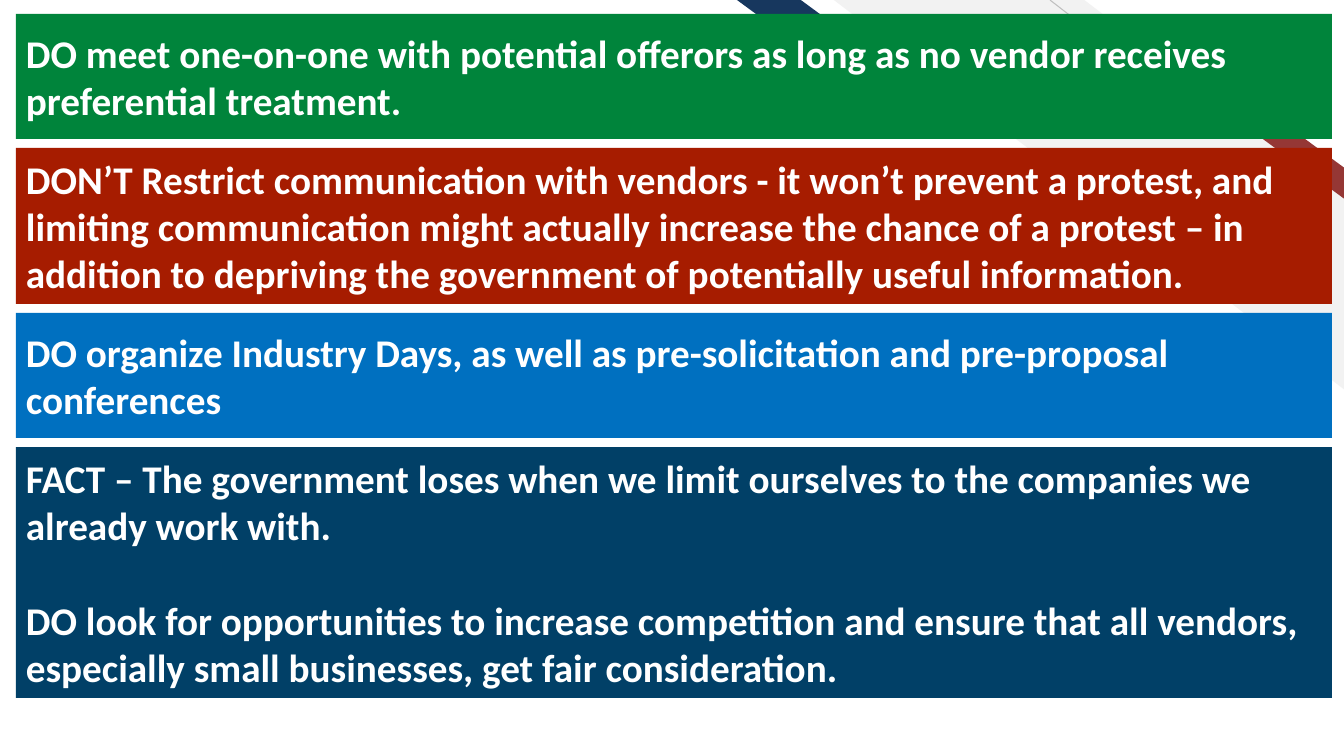
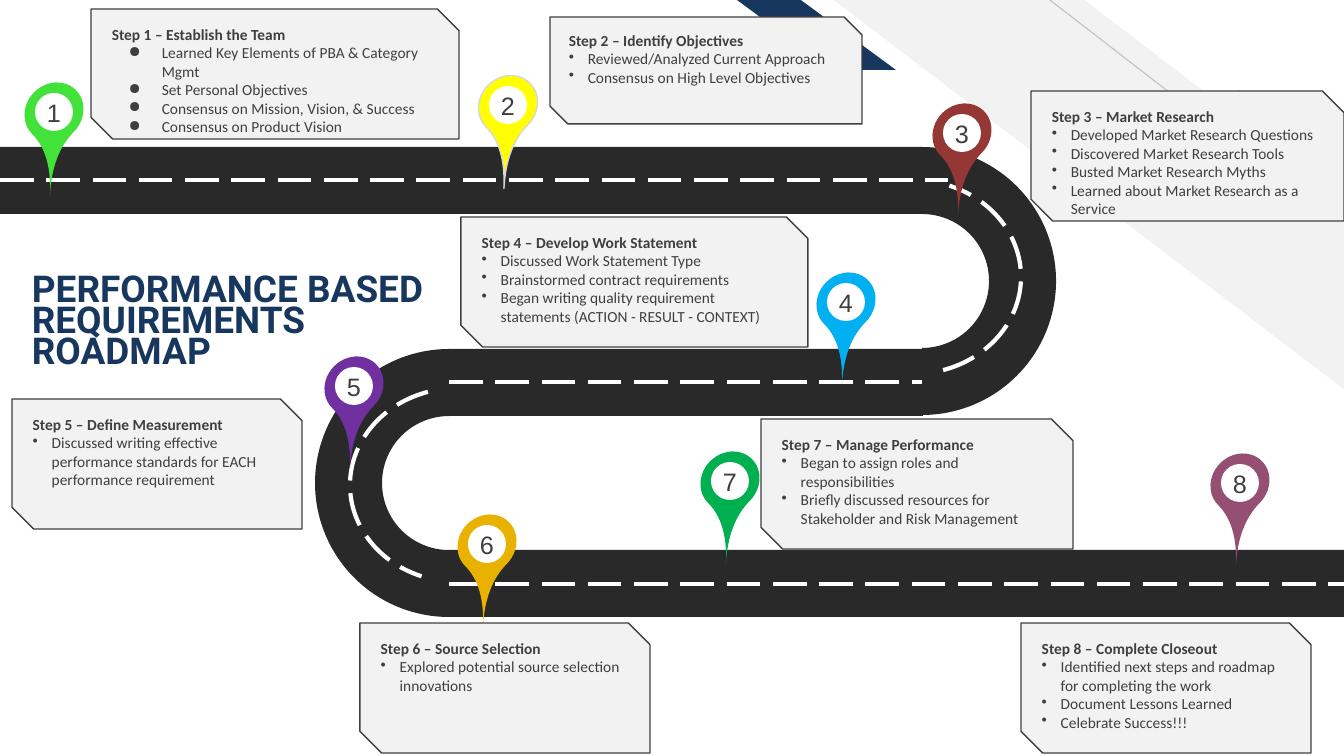
from pptx import Presentation, util as u
from pptx.dml.color import RGBColor
from pptx.enum import dml, shapes, text
from pptx.oxml.xmlchemy import OxmlElement

PX = 914400 / 100.8
WIDTH, HEIGHT = 1344, 756
SHAPE = shapes.MSO_SHAPE
BODY_FONT, NUMBER_FONT, TITLE_FONT = "Calibri", "Arial", "Roboto"

WHITE = RGBColor(0xFF, 0xFF, 0xFF)
NAVY = RGBColor(0x17, 0x37, 0x5E)
BRICK = RGBColor(0x95, 0x37, 0x35)
PALE = RGBColor(0xF2, 0xF2, 0xF2)
SILVER = RGBColor(0xBF, 0xBF, 0xBF)
LIGHT = RGBColor(0xD8, 0xD8, 0xD8)
INK = RGBColor(0x3F, 0x3F, 0x3F)
ASPHALT = RGBColor(0x29, 0x29, 0x29)
GREEN = RGBColor(0x00, 0x84, 0x3B)
RED = RGBColor(0xA6, 0x1C, 0x00)
BLUE = RGBColor(0x00, 0x70, 0xC0)
DEEP_BLUE = RGBColor(0x01, 0x40, 0x67)
LIME = RGBColor(0x42, 0xE2, 0x3A)
YELLOW = RGBColor(0xFF, 0xFF, 0x00)
SKY = RGBColor(0x00, 0xB0, 0xF0)
PURPLE = RGBColor(0x70, 0x30, 0xA0)
GOLD = RGBColor(0xEA, 0xB2, 0x00)
EMERALD = RGBColor(0x00, 0xB0, 0x50)
PLUM = RGBColor(0x95, 0x4F, 0x72)

# Advice bars: colour, height, paragraphs
BARS = [
    (GREEN, 125, ["DO meet one-on-one with potential offerors as long as no vendor "
                  "receives preferential treatment."]),
    (RED, 156, ["DON’T Restrict communication with vendors - it won’t prevent a protest, "
                "and limiting communication might actually increase the chance of a "
                "protest – in addition to depriving the government of potentially useful "
                "information."]),
    (BLUE, 125, ["DO organize Industry Days, as well as pre-solicitation and "
                 "pre-proposal conferences"]),
    (DEEP_BLUE, 251, ["FACT – The government loses when we limit ourselves to the "
                      "companies we already work with.",
                      "DO look for opportunities to increase competition and ensure that "
                      "all vendors, especially small businesses, get fair consideration."]),
]
BAR_LEFT, BAR_TOP, BAR_WIDTH, BAR_GAP = 16, 14, 1316, 9

TITLE_LINES = ["PERFORMANCE BASED REQUIREMENTS", "ROADMAP"]

# Roadmap steps: pin colour, pin corner, card box, heading, points
STEPS = [
    (LIME, (23, 84), (91, 9, 368, 130), "Establish the Team",
     ["Learned Key Elements of PBA & Category Mgmt", "Set Personal Objectives",
      "Consensus on Mission, Vision, & Success", "Consensus on Product Vision"]),
    (YELLOW, (477, 77), (550, 17, 312, 107), "Identify Objectives",
     ["Reviewed/Analyzed Current Approach", "Consensus on High Level Objectives"]),
    (BRICK, (931, 105), (1031, 91, 313, 130), "Market Research",
     ["Developed Market Research Questions", "Discovered Market Research Tools",
      "Busted Market Research Myths", "Learned about Market Research as a Service"]),
    (SKY, (815, 274), (461, 217, 347, 130), "Develop Work Statement",
     ["Discussed Work Statement Type", "Brainstormed contract requirements",
      "Began writing quality requirement statements (ACTION - RESULT - CONTEXT)"]),
    (PURPLE, (323, 358), (12, 399, 290, 130), "Define Measurement",
     ["Discussed writing effective performance standards for EACH performance "
      "requirement"]),
    (GOLD, (456, 516), (360, 623, 290, 130), "Source Selection",
     ["Explored potential source selection innovations"]),
    (EMERALD, (699, 453), (761, 419, 312, 130), "Manage Performance",
     ["Began to assign roles and responsibilities",
      "Briefly discussed resources for Stakeholder and Risk Management"]),
    (PLUM, (1209, 455), (1021, 623, 290, 130), "Complete Closeout",
     ["Identified next steps and roadmap for completing the work",
      "Document Lessons Learned", "Celebrate Success!!!"]),
]
# Bullet sign and hanging indent; the first step has its own
FIRST_BULLET, BULLET = ("●", 50, 33), ("•", 19, 19)

# Road: lanes (left, right, top), bends and bend dashes (left, top, rotation)
ROAD, BEND = 67, 268
LANES = [(0, 922, 147), (448, 923, 349), (448, WIDTH, 550)]
BENDS = [(788, 147, 90), (315, 349, 270)]
LANE_DASHES = [(0, 948, 180), (449, 922, 382), (449, WIDTH, 584)]
BEND_DASHES = [(805, 180, 0), (350, 388, 180)]


def px(value):
    return u.Emu(round(value * PX))


def add_shape(slide, kind, box, fill=None, line=None, adjust=(), rotation=0, flip=False):
    shape = slide.shapes.add_shape(kind, *map(px, box))
    shape.shadow.inherit = False
    for index, value in enumerate(adjust):
        shape.adjustments[index] = value
    shape.rotation = rotation
    if flip:
        shape._element.spPr.xfrm.set("flipH", "1")
    if fill is None:
        shape.fill.background()
    else:
        shape.fill.solid()
        shape.fill.fore_color.rgb = fill
    if line is None:
        shape.line.fill.background()
    else:
        shape.line.color.rgb = line
        shape.line.width = u.Pt(1)
    return shape


def style_dashes(line):
    line.color.rgb = WHITE
    line.width = u.Pt(3)
    line.dash_style = dml.MSO_LINE.LONG_DASH


def add_line(slide, start, end):
    connector = slide.shapes.add_connector(
        shapes.MSO_CONNECTOR.STRAIGHT, *map(px, start + end))
    connector.line.color.rgb = SILVER
    connector.line.width = u.Pt(0.75)
    connector._element.spPr.append(OxmlElement("a:effectLst"))
    return connector


def add_run(paragraph, words, font, size, color, bold=False):
    run = paragraph.add_run()
    run.text = words
    run.font.name, run.font.size, run.font.bold = font, u.Pt(size), bold
    run.font.color.rgb = color


def add_paragraph(frame, first):
    paragraph = frame.paragraphs[0] if first else frame.add_paragraph()
    paragraph.alignment = text.PP_ALIGN.LEFT
    return paragraph


def add_bullet(paragraph, sign, margin, hang):
    properties = paragraph._p.get_or_add_pPr()
    properties.set("marL", str(px(margin)))
    properties.set("indent", str(-px(hang)))
    bullet = OxmlElement("a:buChar")
    bullet.set("char", sign)
    properties.append(bullet)


def new_slide(presentation):
    """Blank slide with the shared corner stripes."""
    slide = presentation.slides.add_slide(presentation.slide_layouts[6])
    add_shape(slide, SHAPE.DIAGONAL_STRIPE, (834, 0, 511, 390), PALE,
              adjust=[0.51], flip=True)
    add_line(slide, (1187, 106), (1050, 0))
    add_shape(slide, SHAPE.PARALLELOGRAM, (1217, 132, 149, 25), BRICK,
              adjust=[0.72], rotation=36.3, flip=True)
    add_shape(slide, SHAPE.PARALLELOGRAM, (737, 0, 159, 70), NAVY,
              adjust=[1.36], flip=True)
    return slide


def build_advice(presentation):
    slide = new_slide(presentation)
    top = BAR_TOP
    for color, height, paragraphs in BARS:
        bar = add_shape(slide, SHAPE.RECTANGLE, (BAR_LEFT, top, BAR_WIDTH, height), color)
        frame = bar.text_frame
        frame.vertical_anchor = text.MSO_ANCHOR.MIDDLE
        for index, words in enumerate(paragraphs):
            paragraph = add_paragraph(frame, index == 0)
            if index:
                paragraph.space_before = u.Pt(34)
            add_run(paragraph, words, BODY_FONT, 28, WHITE, True)
        top += height + BAR_GAP


def add_title(slide):
    frame = slide.shapes.add_textbox(*map(px, (22, 273, 440, 115))).text_frame
    frame.word_wrap = True
    paragraph = add_paragraph(frame, True)
    paragraph.line_spacing = 0.7
    for index, words in enumerate(TITLE_LINES):
        if index:
            paragraph.add_line_break()
        add_run(paragraph, words, TITLE_FONT, 26.4, NAVY, True)


def add_road(slide):
    for left, right, top in LANES:
        add_shape(slide, SHAPE.RECTANGLE, (left, top, right - left, ROAD), ASPHALT)
    for left, top, rotation in BENDS:
        add_shape(slide, SHAPE.BLOCK_ARC, (left, top, BEND, BEND), ASPHALT,
                  rotation=rotation)
    for left, right, y in LANE_DASHES:
        style_dashes(add_line(slide, (left, y), (right, y)).line)
    for left, top, rotation in BEND_DASHES:
        arc = add_shape(slide, SHAPE.ARC, (left, top, 216, 194), line=WHITE,
                        adjust=[64.75, 148.97], rotation=rotation, flip=True)
        style_dashes(arc.line)


def add_pin(slide, number, color, left, top):
    add_shape(slide, SHAPE.TEAR, (left, top, 62, 56), color,
              line=LIGHT if color == YELLOW else None, adjust=[2], rotation=134.9)
    disc = add_shape(slide, SHAPE.OVAL, (left + 12, top + 9, 38, 38), WHITE)
    frame = disc.text_frame
    frame.margin_left = frame.margin_right = frame.margin_top = frame.margin_bottom = 0
    frame.word_wrap = False
    frame.vertical_anchor = text.MSO_ANCHOR.MIDDLE
    paragraph = frame.paragraphs[0]
    paragraph.alignment = text.PP_ALIGN.CENTER
    add_run(paragraph, str(number), NUMBER_FONT, 18, INK)


def add_card(slide, box, heading, points, bullet):
    card = add_shape(slide, SHAPE.SNIP_2_DIAG_RECTANGLE, box, PALE, line=INK)
    frame = card.text_frame
    frame.vertical_anchor = text.MSO_ANCHOR.TOP
    add_run(add_paragraph(frame, True), heading, BODY_FONT, 11, INK, True)
    for point in points:
        paragraph = add_paragraph(frame, False)
        add_bullet(paragraph, *bullet)
        add_run(paragraph, point, BODY_FONT, 11, INK)


def build_roadmap(presentation):
    slide = new_slide(presentation)
    add_title(slide)
    add_road(slide)
    for number, (color, corner, box, heading, points) in enumerate(STEPS, 1):
        add_pin(slide, number, color, *corner)
        add_card(slide, box, f"Step {number} – {heading}", points,
                 FIRST_BULLET if number == 1 else BULLET)


def main():
    presentation = Presentation()
    presentation.slide_width, presentation.slide_height = px(WIDTH), px(HEIGHT)
    build_advice(presentation)
    build_roadmap(presentation)
    presentation.save("out.pptx")


if __name__ == "__main__":
    main()
